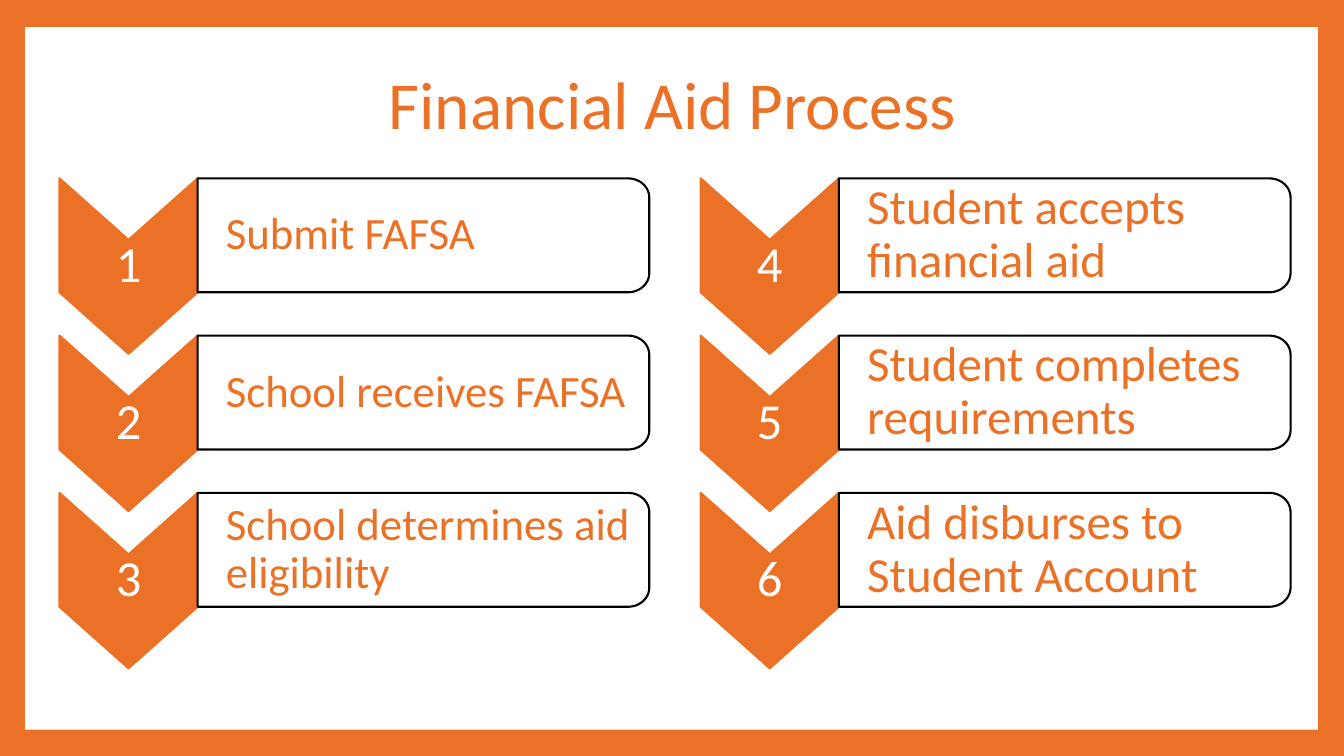
from math import cos, pi, sin

from pptx import Presentation
from pptx.dml.color import RGBColor
from pptx.enum.shapes import MSO_SHAPE
from pptx.enum.text import MSO_ANCHOR, PP_ALIGN
from pptx.util import Inches, Pt

RECTANGLE = MSO_SHAPE.RECTANGLE
MIDDLE = MSO_ANCHOR.MIDDLE
LEFT, CENTER = PP_ALIGN.LEFT, PP_ALIGN.CENTER

ORANGE, WHITE, BLACK = "EA7125", "FFFFFF", "000000"

# Steps by column: left edge, label size, labels
COLUMNS = [
    (0.59, 32, ["Submit FAFSA", "School receives FAFSA",
                "School determines aid eligibility"]),
    (6.95, 35, ["Student accepts financial aid", "Student completes requirements",
                "Aid disburses to Student Account"]),
]
TOP, ROW_PITCH = 1.77, 1.56
CHEVRON_WIDTH, CHEVRON_POINT = 1.37, 0.61
LABEL_WIDTH, BAND_HEIGHT = 4.48, 1.13
CORNER_WIDTH, CORNER_HEIGHT, CORNER_STEPS = 0.21, 0.19, 12


def color(hex_string):
    return RGBColor.from_string(hex_string)


class ProcessSlide:
    font = "Calibri"
    line_width = 1.5

    def __init__(self, presentation):
        self.slide = presentation.slides.add_slide(presentation.slide_layouts[5])
        self.shapes = self.slide.shapes

    def background(self, fill):
        paint = self.slide.background.fill
        paint.solid()
        paint.fore_color.rgb = color(fill)

    def paint(self, shape, fill, line=None):
        shape.shadow.inherit = False
        shape.fill.solid()
        shape.fill.fore_color.rgb = color(fill)
        if line:
            shape.line.color.rgb = color(line)
            shape.line.width = Pt(self.line_width)
        else:
            shape.line.fill.background()

    def set_text(self, shape, text, size, ink, align, insets):
        frame = shape.text_frame
        frame.word_wrap = True
        frame.vertical_anchor = MIDDLE
        for side, inset in zip(("left", "top", "right", "bottom"), insets):
            setattr(frame, f"margin_{side}", Inches(inset))
        frame.text = text
        paragraph = frame.paragraphs[0]
        for name, value in {"alignment": align, "line_spacing": 0.9}.items():
            setattr(paragraph, name, value)
        font = paragraph.runs[0].font
        for name, value in {"name": self.font, "size": Pt(size)}.items():
            setattr(font, name, value)
        font.color.rgb = color(ink)

    def panel(self, left, top, width, height, fill):
        panel = self.shapes.add_shape(RECTANGLE, Inches(left), Inches(top),
                                      Inches(width), Inches(height))
        self.paint(panel, fill)

    def title(self, text, left, top, width, height):
        title = self.shapes.title
        box = {"left": left, "top": top, "width": width, "height": height}
        for name, value in box.items():
            setattr(title, name, Inches(value))
        self.set_text(title, text, 48, ORANGE, CENTER, (0.1, 0.05, 0.1, 0.05))

    def outline(self, points, fill, line):
        corners = [(Inches(x), Inches(y)) for x, y in points]
        builder = self.shapes.build_freeform(*corners[0])
        builder.add_line_segments(corners[1:], close=True)
        shape = builder.convert_to_shape()
        self.paint(shape, fill, line)
        return shape

    def chevron(self, left, top, number):
        middle, right = left + CHEVRON_WIDTH / 2, left + CHEVRON_WIDTH
        bottom = top + BAND_HEIGHT
        chevron = self.outline(
            [(right, top), (right, bottom), (middle, bottom + CHEVRON_POINT),
             (left, bottom), (left, top), (middle, top + CHEVRON_POINT)],
            ORANGE, ORANGE)
        self.set_text(chevron, str(number), 36, WHITE, CENTER, (0.03, 0.72, 0.03, 0.72))

    def label(self, left, top, text, size):
        right, bottom = left + LABEL_WIDTH, top + BAND_HEIGHT
        angles = [pi / 2 * step / CORNER_STEPS for step in range(CORNER_STEPS + 1)]
        # Upper right corner, and its mirror image below
        upper = [(right - CORNER_WIDTH * (1 - sin(a)), top + CORNER_HEIGHT * (1 - cos(a)))
                 for a in angles]
        lower = [(x, top + bottom - y) for x, y in reversed(upper)]
        label = self.outline([(left, top), *upper, *lower, (left, bottom)], WHITE, BLACK)
        self.set_text(label, text, size, ORANGE, LEFT, (0.28, 0.09, 0.09, 0.09))


def main():
    presentation = Presentation()
    presentation.slide_width = Inches(13.33)
    presentation.slide_height = Inches(7.5)
    process = ProcessSlide(presentation)

    # Frame and title
    process.background(ORANGE)
    process.panel(0.25, 0.27, 12.82, 6.97, WHITE)
    process.title("Financial Aid Process", 1.27, 0.57, 10.8, 0.99)

    # Numbered steps
    number = 0
    for left, size, labels in COLUMNS:
        for row, text in enumerate(labels):
            number += 1
            top = TOP + row * ROW_PITCH
            process.chevron(left, top, number)
            process.label(left + CHEVRON_WIDTH, top, text, size)

    # Bring the title in front of the panel
    tree = process.shapes.title.element.getparent()
    tree.append(process.shapes.title.element)

    presentation.save("out.pptx")


if __name__ == "__main__":
    main()
